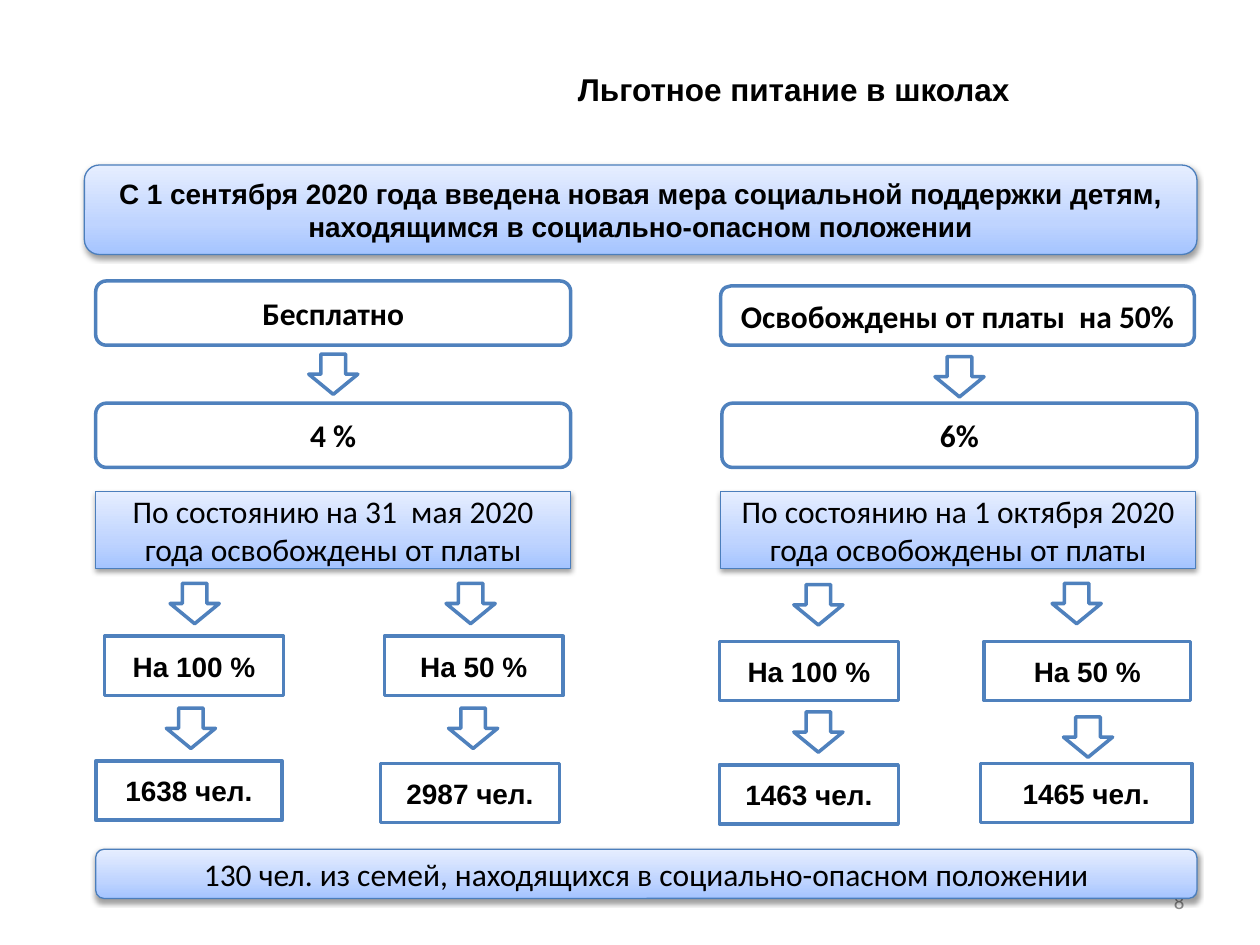
from lxml.etree import SubElement
from pptx import Presentation
from pptx.dml.color import RGBColor
from pptx.enum.shapes import MSO_SHAPE
from pptx.enum.text import MSO_ANCHOR, PP_ALIGN
from pptx.oxml.ns import qn
from pptx.util import Inches, Pt

BLUE = "4F81BD"
BANNER_LINE = "4B7EBC"
BANNER_STOPS = [(0, "A4C4FF"), (35, "BFD4FF"), (100, "E6EEFF")]
ARROW_W, ARROW_H = 0.39, 0.32
BOX_H = 0.47


def rgb(value):
    return RGBColor.from_string(value)


def set_text(shape, text, size=18, font="Calibri", color="000000", bold=False,
             align=PP_ALIGN.CENTER, anchor=MSO_ANCHOR.MIDDLE):
    tf = shape.text_frame
    tf.word_wrap = True
    tf.vertical_anchor = anchor
    p = tf.paragraphs[0]
    p.alignment = align
    r = p.add_run()
    r.text = text
    r.font.size = Pt(size)
    r.font.name = font
    r.font.bold = bold
    r.font.color.rgb = rgb(color)


def add_label(s, box, text, **fmt):
    set_text(s.shapes.add_textbox(*map(Inches, box)), text, **fmt)


def add_outlined(s, kind, box):
    """Add a white shape with a blue outline."""
    sp = s.shapes.add_shape(kind, *map(Inches, box))
    sp.shadow.inherit = False
    sp.fill.solid()
    sp.fill.fore_color.rgb = rgb("FFFFFF")
    sp.line.color.rgb = rgb(BLUE)
    sp.line.width = Pt(2)
    return sp


def add_arrow(s, left, top):
    add_outlined(s, MSO_SHAPE.DOWN_ARROW, (left, top, ARROW_W, ARROW_H))


def add_color(parent, value):
    return SubElement(parent, qn("a:srgbClr"), val=value)


def add_banner(s, kind, box, text, **fmt):
    """Add a shape with a blue gradient and a soft shadow below it."""
    sp = s.shapes.add_shape(kind, *map(Inches, box))
    sp.line.color.rgb = rgb(BANNER_LINE)
    sp.line.width = Pt(0.75)
    sp.fill.gradient()
    sp.fill.gradient_angle = 90
    sp.shadow.inherit = False
    props = sp.element.spPr
    stops = props.find(".//" + qn("a:gsLst"))
    for stop in list(stops):
        stops.remove(stop)
    for position, value in BANNER_STOPS:
        add_color(SubElement(stops, qn("a:gs"), pos=str(position * 1000)), value)
    shadow = SubElement(props.find(qn("a:effectLst")), qn("a:outerShdw"),
                        blurRad=str(Pt(3.1)), dist=str(Pt(1.6)),
                        dir="5400000", rotWithShape="0")
    SubElement(add_color(shadow, "000000"), qn("a:alpha"), val="38000")
    set_text(sp, text, **fmt)


def main():
    prs = Presentation()
    prs.slide_width, prs.slide_height = Inches(10), Inches(7.5)
    s = prs.slides.add_slide(prs.slide_layouts[6])
    rect, rounded = MSO_SHAPE.RECTANGLE, MSO_SHAPE.ROUNDED_RECTANGLE

    add_label(s, (7.17, 6.95, 2.33, 0.4), "8", size=12, color="8C8C8C",
              align=PP_ALIGN.RIGHT)
    add_label(s, (2.4, 0.51, 7.8, 0.55), "Льготное питание в школах",
              font="Arial", bold=True, anchor=MSO_ANCHOR.TOP)
    add_banner(s, rounded, (0.67, 1.31, 8.83, 0.71),
               "С 1 сентября 2020 года введена новая мера социальной поддержки "
               "детям, находящимся в социально-опасном положении",
               size=16, font="Arial", bold=True)

    shares = [
        ((0.76, 2.23, 3.77, 0.51), "Бесплатно"),
        ((5.72, 2.27, 3.76, 0.47), "Освобождены от платы  на 50%"),
        ((0.76, 3.2, 3.77, 0.51), "4 %"),
        ((5.73, 3.2, 3.77, 0.51), "6%"),
    ]
    for box, text in shares:
        set_text(add_outlined(s, rounded, box), text, bold=True)

    dates = [(0.76, "31  мая"), (5.72, "1 октября")]
    for left, date in dates:
        add_banner(s, rect, (left, 3.9, 3.77, 0.61),
                   f"По состоянию на {date} 2020 года освобождены от платы")

    counts = [
        (0.83, 5.05, 1.42, "На 100 %"), (0.76, 6.04, 1.48, "1638 чел."),
        (3.05, 5.05, 1.42, "На 50 %"), (3.02, 6.06, 1.42, "2987 чел."),
        (5.71, 5.09, 1.42, "На 100 %"), (5.71, 6.07, 1.42, "1463 чел."),
        (7.81, 5.09, 1.64, "На 50 %"), (7.78, 6.06, 1.68, "1465 чел."),
    ]
    for left, top, width, text in counts:
        set_text(add_outlined(s, rect, (left, top, width, BOX_H)), text,
                 size=16, font="Arial", bold=True)

    arrows = [
        (2.45, 2.81), (7.42, 2.83),
        (1.35, 4.63), (3.54, 4.63), (6.3, 4.64), (8.35, 4.63),
        (1.32, 5.62), (3.56, 5.62), (6.3, 5.65), (8.44, 5.69),
    ]
    for left, top in arrows:
        add_arrow(s, left, top)

    add_banner(s, rounded, (0.76, 6.74, 8.74, 0.39),
               "130 чел. из семей, находящихся в социально-опасном положении")
    prs.save("out.pptx")


if __name__ == "__main__":
    main()
